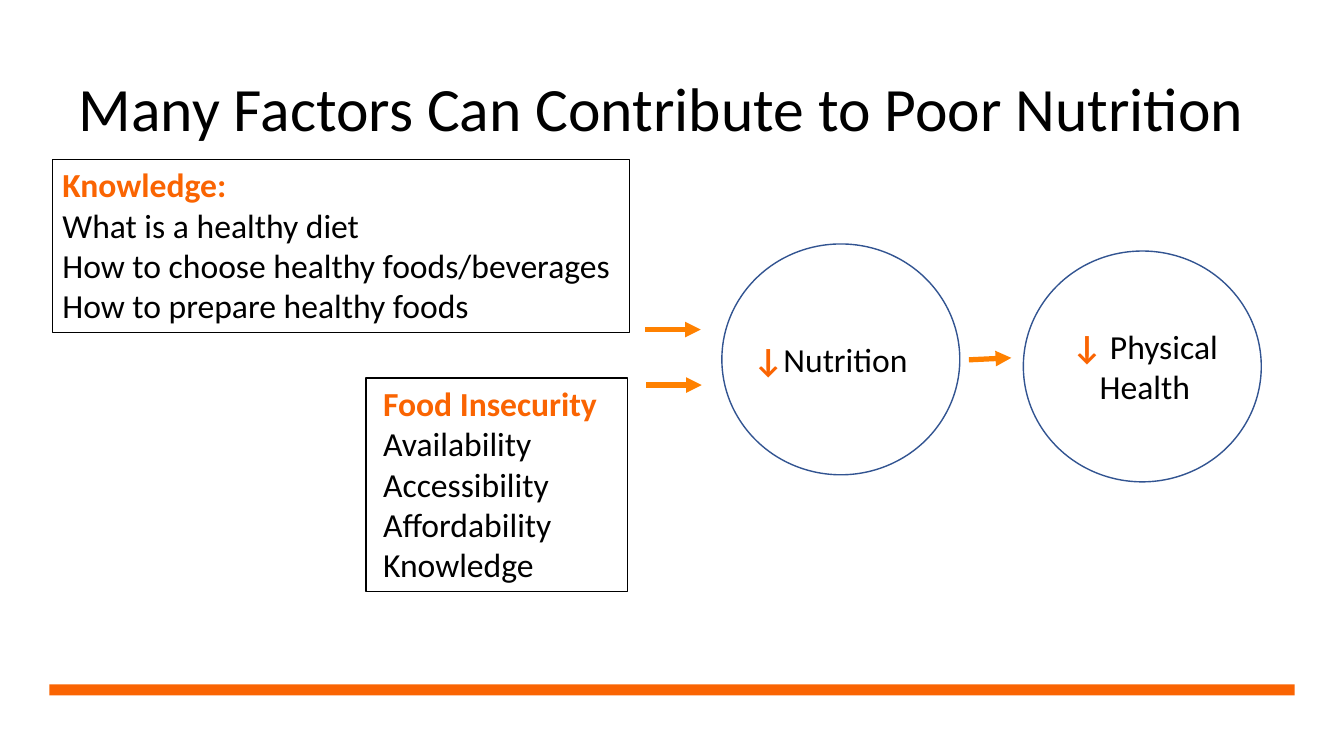
from lxml import etree
from pptx import Presentation
from pptx.dml.color import RGBColor
from pptx.enum.shapes import MSO_CONNECTOR, MSO_SHAPE
from pptx.enum.text import MSO_ANCHOR, MSO_AUTO_SIZE, PP_ALIGN
from pptx.oxml.ns import qn
from pptx.util import Inches, Pt

RECT, OVAL = MSO_SHAPE.RECTANGLE, MSO_SHAPE.OVAL
STRAIGHT = MSO_CONNECTOR.STRAIGHT
LEFT, CENTER = PP_ALIGN.LEFT, PP_ALIGN.CENTER
TOP, MIDDLE = MSO_ANCHOR.TOP, MSO_ANCHOR.MIDDLE
NO_FIT = MSO_AUTO_SIZE.NONE

ORANGE = RGBColor(0xFA, 0x64, 0x02)
ARROW_ORANGE = RGBColor(0xFF, 0x81, 0x00)
BLUE = RGBColor(0x32, 0x54, 0x91)
BLACK = RGBColor(0, 0, 0)


class SlideBuilder:
    font = "Calibri"
    body_size = 24
    title_size = 44

    def __init__(self, slide):
        self.slide = slide

    def run(self, p, text, size=body_size, color=BLACK, bold=False):
        r = p.add_run()
        r.text = text
        r.font.name = self.font
        r.font.size = Pt(size)
        r.font.bold = bold
        r.font.color.rgb = color

    def title(self, text, x, y, w, h):
        sp = self.slide.shapes.title
        sp.left, sp.top, sp.width, sp.height = map(Inches, (x, y, w, h))
        tf = sp.text_frame
        tf.auto_size = NO_FIT
        tf.vertical_anchor = MIDDLE
        p = tf.paragraphs[0]
        p.alignment = LEFT
        p.line_spacing = 0.9
        self.run(p, text, self.title_size)

    def shape(self, kind, x, y, w, h, fill=None, line=None, weight=1):
        sp = self.slide.shapes.add_shape(kind, *map(Inches, (x, y, w, h)))
        sp.shadow.inherit = False
        if fill is None:
            sp.fill.background()
        else:
            sp.fill.solid()
            sp.fill.fore_color.rgb = fill
        if line is None:
            sp.line.fill.background()
        else:
            sp.line.color.rgb = line
            sp.line.width = Pt(weight)
        return sp

    def factor_box(self, heading, items, x, y, w, h, margin=0.1):
        sp = self.shape(RECT, x, y, w, h, line=BLACK, weight=0.75)
        tf = sp.text_frame
        tf.word_wrap = True
        tf.vertical_anchor = TOP
        tf.margin_left = Inches(margin)
        for i, text in enumerate([heading, *items]):
            p = tf.add_paragraph() if i else tf.paragraphs[0]
            p.alignment = LEFT
            if i:
                self.run(p, text)
            else:
                self.run(p, text, color=ORANGE, bold=True)

    def decrease_label(self, arrow, text, x, y, w, h, align=LEFT):
        """Text box with a bold orange down arrow ahead of the text."""
        sp = self.slide.shapes.add_textbox(*map(Inches, (x, y, w, h)))
        tf = sp.text_frame
        tf.word_wrap = True
        p = tf.paragraphs[0]
        p.alignment = align
        self.run(p, arrow, color=ORANGE, bold=True)
        self.run(p, text)

    def arrow(self, x1, y1, x2, y2):
        cxn = self.slide.shapes.add_connector(STRAIGHT, *map(Inches, (x1, y1, x2, y2)))
        cxn.line.color.rgb = ARROW_ORANGE
        cxn.line.width = Pt(3.75)
        etree.SubElement(cxn.line._get_or_add_ln(), qn("a:tailEnd"), type="triangle")
        etree.SubElement(cxn._element.spPr, qn("a:effectLst"))


def main():
    prs = Presentation()
    prs.slide_width, prs.slide_height = Inches(13.33), Inches(7.5)
    s = SlideBuilder(prs.slides.add_slide(prs.slide_layouts[5]))

    s.title("Many Factors Can Contribute to Poor Nutrition", 0.68, 0.38, 12.13, 1.45)
    s.shape(RECT, 0.49, 6.79, 12.35, 0.11, fill=ORANGE)

    s.factor_box("Knowledge:",
                 ["What is a healthy diet",
                  "How to choose healthy foods/beverages",
                  "How to prepare healthy foods"],
                 0.52, 1.58, 5.72, 1.72)
    s.factor_box("Food Insecurity",
                 ["Availability", "Accessibility", "Affordability", "Knowledge"],
                 3.63, 3.75, 2.59, 2.12, margin=0.17)

    for x, y in ((7.16, 2.42), (10.15, 2.49)):
        s.shape(OVAL, x, y, 2.36, 2.29, line=BLUE)
    s.decrease_label("↓", "Nutrition", 7.37, 3.31, 2.29, 0.5)
    s.decrease_label("↓ ", "Physical Health", 10.46, 3.18, 1.79, 0.91, CENTER)

    s.arrow(6.4, 3.27, 6.95, 3.27)
    s.arrow(6.41, 3.82, 6.96, 3.82)
    s.arrow(9.61, 3.57, 10.03, 3.55)

    prs.save("out.pptx")


if __name__ == "__main__":
    main()
